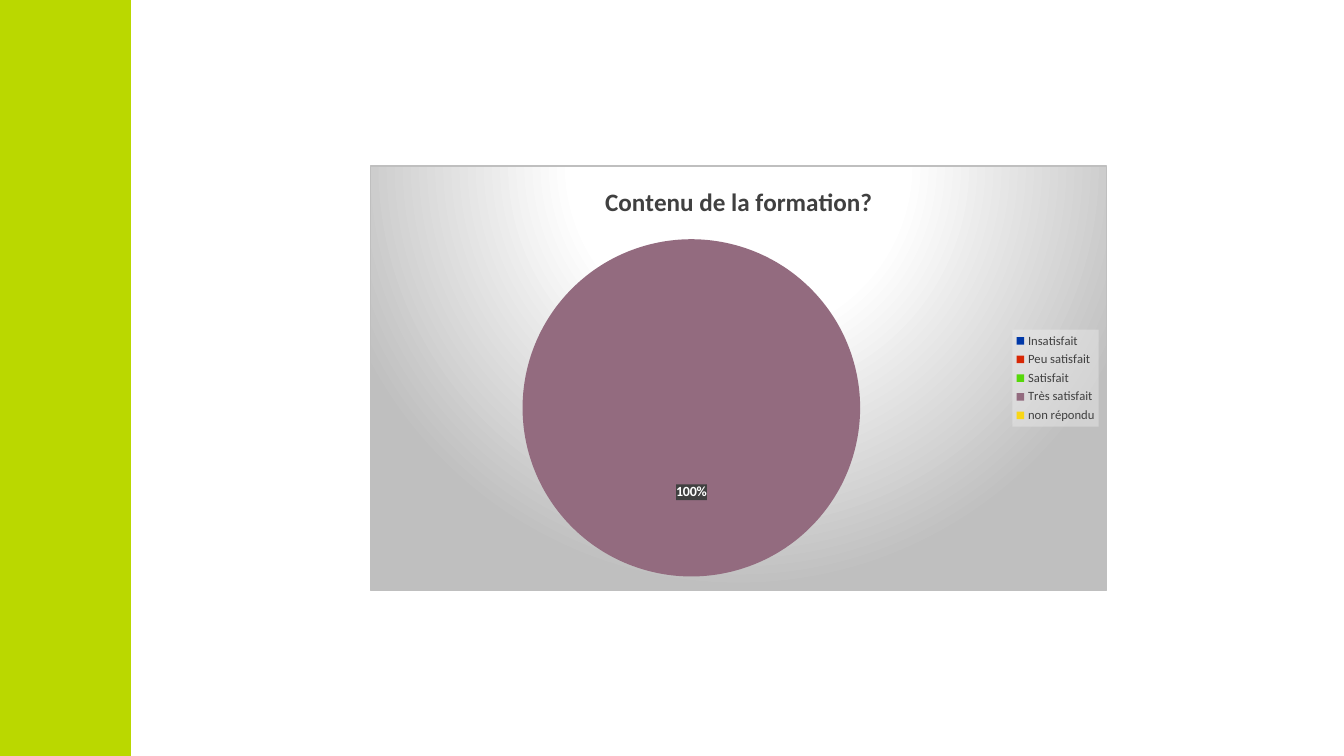
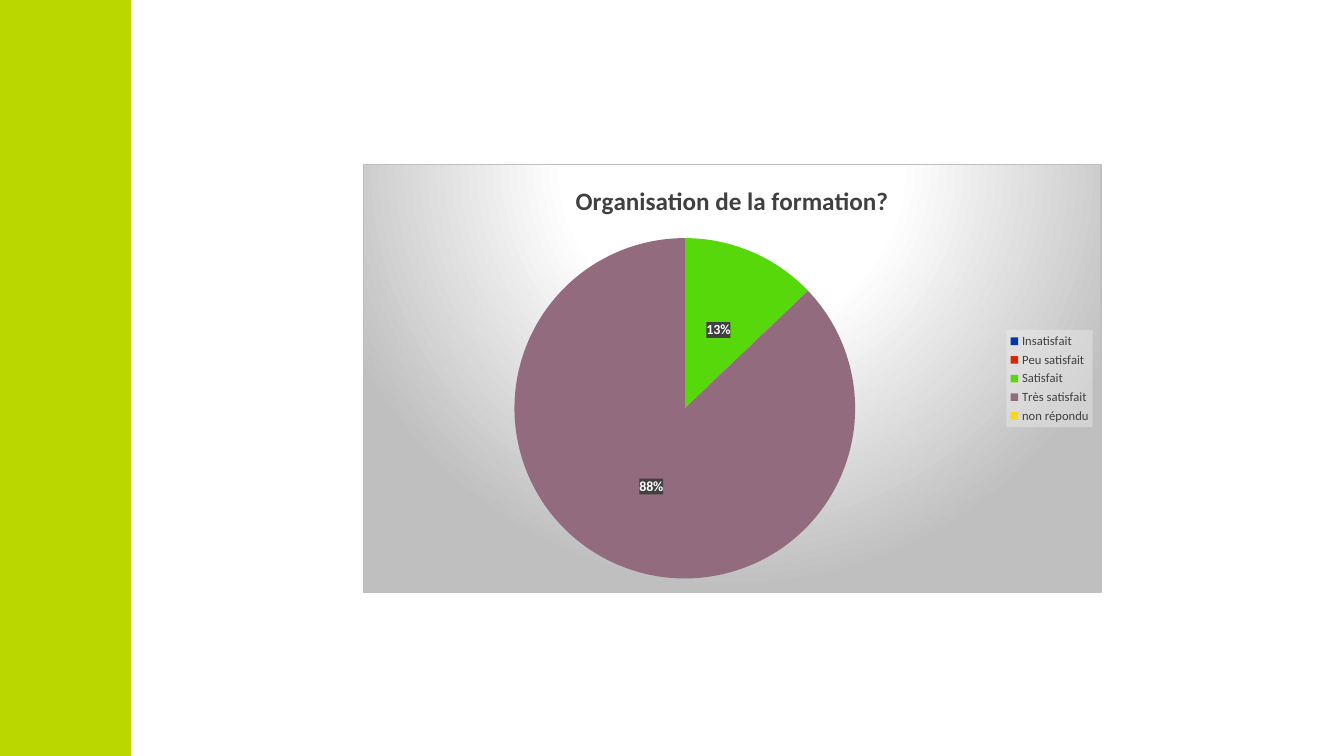
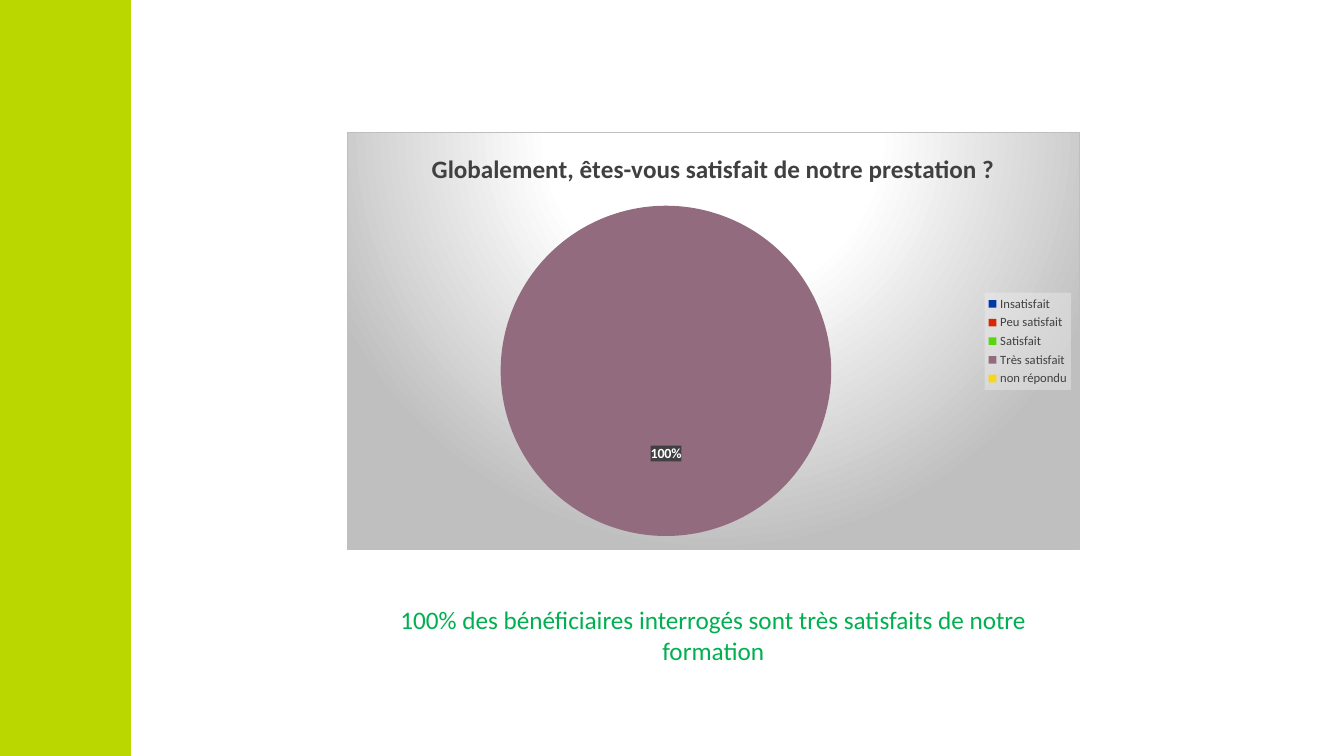
from lxml import etree
from pptx import Presentation
from pptx.chart.data import CategoryChartData
from pptx.dml.color import RGBColor
from pptx.enum.chart import XL_CHART_TYPE, XL_LABEL_POSITION, XL_LEGEND_POSITION
from pptx.enum.shapes import MSO_SHAPE
from pptx.enum.text import PP_ALIGN
from pptx.util import Cm, Pt

PIE = XL_CHART_TYPE.PIE
MIDDLE = XL_LABEL_POSITION.CENTER
RIGHT = XL_LEGEND_POSITION.RIGHT
RECT = MSO_SHAPE.RECTANGLE
CENTER = PP_ALIGN.CENTER

FONT = "Calibri"
LIME = RGBColor(0xBA, 0xD8, 0x00)
GREEN = RGBColor(0x00, 0xB0, 0x50)
DARK = RGBColor(0x40, 0x40, 0x40)
PALE = RGBColor(0xF2, 0xF2, 0xF2)
SILVER = RGBColor(0xBF, 0xBF, 0xBF)
WHITE = RGBColor(0xFF, 0xFF, 0xFF)
BLACK = RGBColor(0x00, 0x00, 0x00)

# Content: answers with their colours, then one entry per slide
ANSWERS = [
    ("Insatisfait", RGBColor(0x00, 0x38, 0xA8)),
    ("Peu satisfait", RGBColor(0xD8, 0x27, 0x05)),
    ("Satisfait", RGBColor(0x56, 0xD8, 0x0A)),
    ("Très satisfait", RGBColor(0x93, 0x6B, 0x7F)),
    ("non répondu", RGBColor(0xF9, 0xD6, 0x16)),
]
SLIDES = [
    {"title": "Contenu de la formation?", "vals": (0, 0, 0, 100, 0),
     "box": (9.32, 4.17, 18.59, 10.72)},
    {"title": "Organisation de la formation?", "vals": (0, 0, 13, 88, 0),
     "box": (9.14, 4.14, 18.62, 10.8)},
    {"title": "Globalement, êtes-vous satisfait de notre prestation ?",
     "vals": (0, 0, 0, 100, 0), "box": (8.74, 3.33, 18.47, 10.54),
     "note": "100% des bénéficiaires interrogés sont très satisfaits "
             "de notre formation",
     "place": (8.74, 15.11, 18.47, 1.8)},
]

NS = ('xmlns:c="http://schemas.openxmlformats.org/drawingml/2006/chart" '
      'xmlns:a="http://schemas.openxmlformats.org/drawingml/2006/main"')
GLOW = f"""<a:gradFill><a:gsLst>
<a:gs pos="0"><a:srgbClr val="{WHITE}"/></a:gs>
<a:gs pos="39000"><a:srgbClr val="{WHITE}"/></a:gs>
<a:gs pos="100000"><a:srgbClr val="{SILVER}"/></a:gs></a:gsLst>
<a:path path="circle"><a:fillToRect l="50000" t="-80000" r="50000" b="180000"/></a:path>
</a:gradFill><a:ln w="9525"><a:solidFill><a:srgbClr val="{SILVER}"/></a:solidFill></a:ln>"""


def style(font, size, color, bold=False):
    font.name, font.size, font.bold = FONT, Pt(size), bold
    font.color.rgb = color


def write(frame, text, size=18, color=DARK, bold=False, align=CENTER):
    para = frame.paragraphs[0]
    para.alignment = align
    run = para.add_run()
    run.text = text
    style(run.font, size, color, bold)


def paint(part, fill):
    """Put a fill on a chart part, just before its text format."""
    text = part.find("{*}txPr")
    text.addprevious(etree.fromstring(f"<c:spPr {NS}>{fill}</c:spPr>"))


def tint(color, alpha):
    return (f'<a:solidFill><a:srgbClr val="{color}">'
            f'<a:alpha val="{alpha * 1000}"/></a:srgbClr></a:solidFill>')


def add_pie(slide, title, vals, box):
    data = CategoryChartData()
    data.categories = [name for name, _ in ANSWERS]
    data.add_series(title, vals)
    chart = slide.shapes.add_chart(PIE, *map(Cm, box), data).chart
    style(chart.font, 10, BLACK)
    paint(chart._chartSpace, GLOW)
    chart.has_title = True
    write(chart.chart_title.text_frame, title, bold=True)
    chart.chart_title.include_text_in_layout = False

    # Legend
    chart.has_legend = True
    legend = chart.legend
    legend.position = RIGHT
    legend.include_in_layout = False
    style(legend.font, 9, DARK)
    paint(legend._element, tint(PALE, 39))

    # Slices and labels
    plot = chart.plots[0]
    plot.vary_by_categories = True
    series = plot.series[0]
    labels = series.data_labels
    labels.show_value = True
    labels.number_format = '0"%"'
    labels.number_format_is_linked = False
    labels.position = MIDDLE
    style(labels.font, 10, WHITE, bold=True)
    paint(labels._element, tint(DARK, 90))
    hidden = 0
    for i, (_, color) in enumerate(ANSWERS):
        fill = series.points[i].format.fill
        fill.solid()
        fill.fore_color.rgb = color
        if not vals[i]:
            labels._element.insert(hidden, etree.fromstring(
                f'<c:dLbl {NS}><c:idx val="{i}"/><c:delete val="1"/></c:dLbl>'))
            hidden += 1


def add_band(deck, layout, slide):
    """Draw the side band and move it to the shared layout."""
    band = slide.shapes.add_shape(RECT, 0, 0, Cm(3.3), deck.slide_height)
    band.shadow.inherit = False
    band.fill.solid()
    band.fill.fore_color.rgb = LIME
    band.line.fill.background()
    layout.shapes._spTree.append(band._element)


def main():
    deck = Presentation()
    deck.slide_width, deck.slide_height = Cm(33.87), Cm(19.05)
    blank = deck.slide_layouts[6]
    for item in SLIDES:
        slide = deck.slides.add_slide(blank)
        if len(deck.slides) == 1:
            add_band(deck, blank, slide)
        if "note" in item:
            frame = slide.shapes.add_textbox(*map(Cm, item["place"])).text_frame
            frame.word_wrap = True
            write(frame, item["note"], color=GREEN)
        add_pie(slide, item["title"], item["vals"], item["box"])
    deck.save("out.pptx")


if __name__ == "__main__":
    main()
